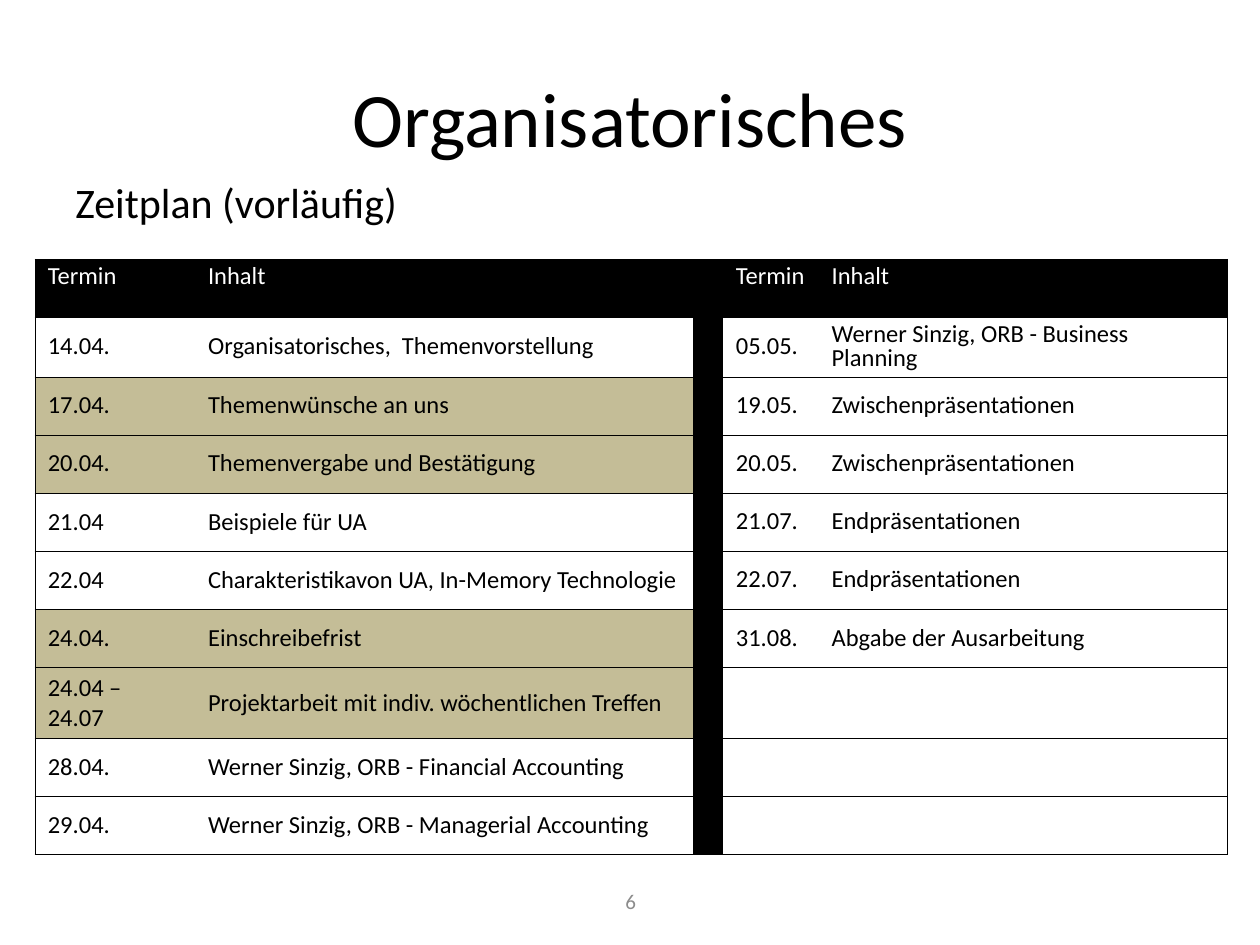
import lxml.etree
import pptx
import pptx.dml.color
import pptx.enum.text
import pptx.oxml.ns
import pptx.util

Cm = pptx.util.Cm
Pt = pptx.util.Pt
Align = pptx.enum.text.PP_ALIGN
Anchor = pptx.enum.text.MSO_ANCHOR
qn = pptx.oxml.ns.qn

COLORS = {"ink": "000000", "paper": "FFFFFF", "sand": "C4BD97", "gray": "8C8C8C"}
WIDTHS = (3.23, 10.03, 0.61, 1.93, 8.23)
HEAD = ("Termin", "Inhalt")
TIGHT = 0.8
# fields: date, topic, fill, line spacing
LEFT = [
    ("14.04.", "Organisatorisches,  Themenvorstellung", "paper", TIGHT),
    ("17.04.", "Themenwünsche an uns", "sand", TIGHT),
    ("20.04.", "Themenvergabe und Bestätigung", "sand", TIGHT),
    ("21.04", "Beispiele für UA", "paper", 1.0),
    ("22.04", "Charakteristikavon UA, In-Memory Technologie", "paper", 1.0),
    ("24.04.", "Einschreibefrist", "sand", 1.0),
    ("24.04 – 24.07", "Projektarbeit mit indiv. wöchentlichen Treffen", "sand", 1.0),
    ("28.04.", "Werner Sinzig, ORB - Financial Accounting", "paper", TIGHT),
    ("29.04.", "Werner Sinzig, ORB - Managerial Accounting", "paper", TIGHT),
]
RIGHT = [
    ("05.05.", "Werner Sinzig, ORB - Business Planning", "paper", TIGHT),
    ("19.05.", "Zwischenpräsentationen", "paper", TIGHT),
    ("20.05.", "Zwischenpräsentationen", "paper", TIGHT),
    ("21.07.", "Endpräsentationen", "paper", TIGHT),
    ("22.07.", "Endpräsentationen", "paper", TIGHT),
    ("31.08.", "Abgabe der Ausarbeitung", "paper", 1.0),
] + [("", "", "paper", 1.0)] * 3


def rgb(name):
    return pptx.dml.color.RGBColor.from_string(COLORS[name])


def write(frame, text, size=14, color="ink", font="Calibri",
          align=Align.LEFT, space=1.0, before=0):
    par = frame.paragraphs[0]
    par.alignment = align
    par.line_spacing = space
    par.space_before = Pt(before)
    par.font.size = Pt(size)
    if text:
        run = par.add_run()
        run.text = text
        run.font.name = font
        run.font.size = Pt(size)
        run.font.color.rgb = rgb(color)


class Deck:
    """Holds the style and the current slide."""

    def __init__(self, wide, high):
        self.show = pptx.Presentation()
        self.show.slide_width = Cm(wide)
        self.show.slide_height = Cm(high)
        self.slide = self.show.slides.add_slide(self.show.slide_layouts[6])

    def label(self, text, box, anchor=Anchor.MIDDLE, **form):
        frame = self.slide.shapes.add_textbox(*map(Cm, box)).text_frame
        frame.word_wrap = True
        frame.vertical_anchor = anchor
        write(frame, text, **form)

    def edge(self, cell, sides):
        props = cell._tc.get_or_add_tcPr()
        for spot, side in enumerate("LRTB"):
            line = lxml.etree.Element(qn("a:ln" + side), w=str(Pt(0.75)))
            if side in sides:
                fill = lxml.etree.SubElement(line, qn("a:solidFill"))
                lxml.etree.SubElement(fill, qn("a:srgbClr"), val=COLORS["ink"])
            else:
                lxml.etree.SubElement(line, qn("a:noFill"))
            props.insert(spot, line)

    def cell(self, cell, text, fill, sides, anchor=Anchor.MIDDLE, **form):
        cell.fill.solid()
        cell.fill.fore_color.rgb = rgb(fill)
        cell.vertical_anchor = anchor
        write(cell.text_frame, text, **form)
        self.edge(cell, sides)

    def table(self, left, top, widths, high, rows):
        count = len(rows)
        grid = self.slide.shapes.add_table(
            count, len(widths), Cm(left), Cm(top),
            Cm(sum(widths)), Cm(high * count)).table
        grid.first_row = grid.horz_banding = False
        for col, wide in zip(grid.columns, widths):
            col.width = Cm(wide)
        ends = {0: "LTB", len(widths) - 1: "RTB"}
        for row, items in enumerate(rows):
            grid.rows[row].height = Cm(high)
            for col, (text, fill, form) in enumerate(items):
                self.cell(grid.cell(row, col), text, fill, ends.get(col, "TB"), **form)


def pair(date, topic, fill, space):
    return [(text, fill, {"space": space}) for text in (date, topic)]


def main():
    deck = Deck(25.4, 19.05)
    deck.label("Organisatorisches", (1.27, 0.76, 22.86, 3.18),
               size=44, align=Align.CENTER)
    deck.label("Zeitplan (vorläufig)", (1.27, 3.38, 22.86, 12.57),
               anchor=Anchor.TOP, size=24, space=1.05, before=4.8)
    deck.label("6", (8.69, 17.65, 8.05, 1.02),
               size=12, color="gray", align=Align.CENTER)
    gap = [("", "ink", {})]
    look = {"color": "paper", "space": TIGHT, "anchor": Anchor.TOP}
    head = [(text, "ink", look) for text in HEAD]
    rows = [head + gap + head]
    rows += [pair(*one) + gap + pair(*two) for one, two in zip(LEFT, RIGHT)]
    deck.table(0.71, 5.23, WIDTHS, 1.17, rows)
    deck.show.save("out.pptx")


if __name__ == "__main__":
    main()
